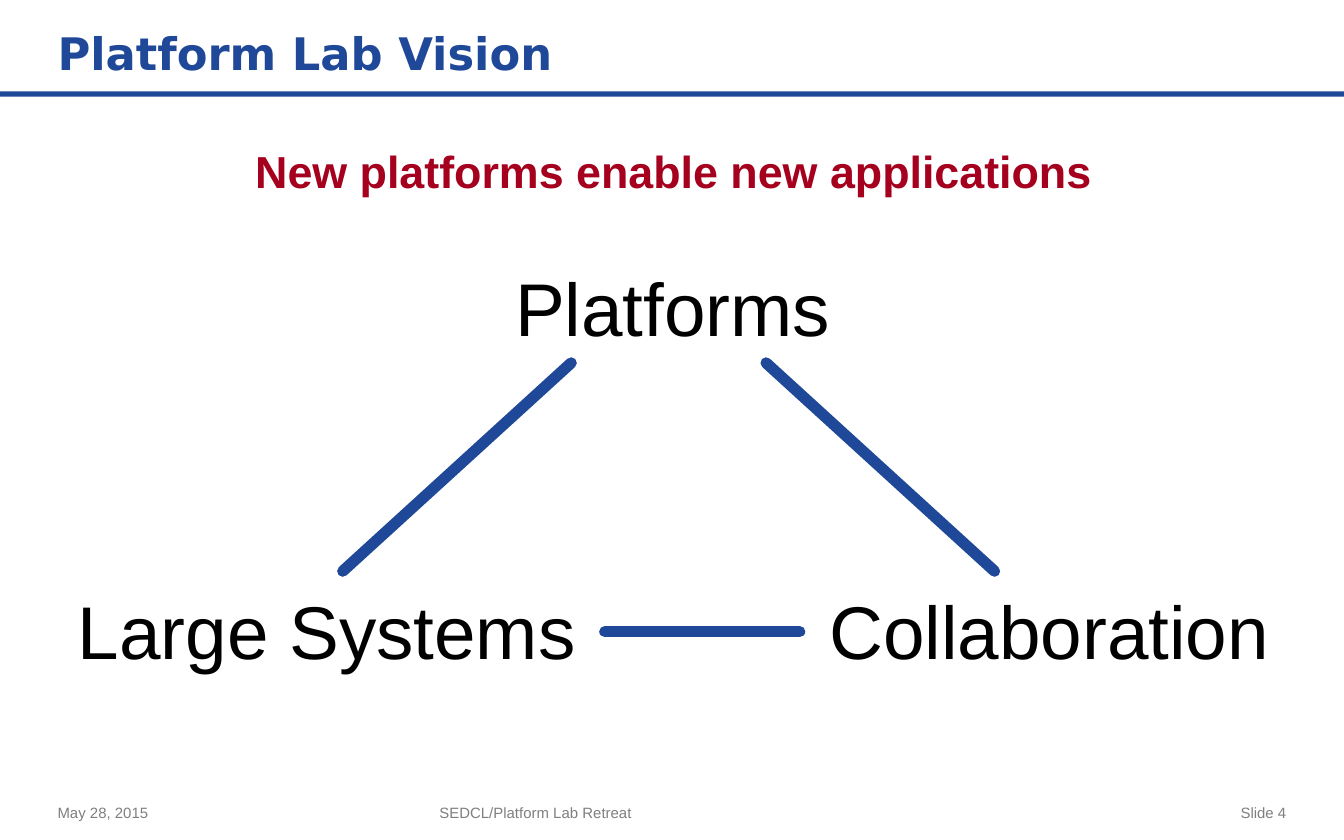
from lxml import etree
from pptx import Presentation
from pptx.dml.color import RGBColor
from pptx.enum.shapes import MSO_CONNECTOR, MSO_SHAPE
from pptx.enum.text import MSO_ANCHOR, MSO_AUTO_SIZE, PP_ALIGN
from pptx.oxml.ns import qn
from pptx.util import Inches, Pt

BLUE = RGBColor(0x1F, 0x48, 0x99)
RED = RGBColor(0xA5, 0x00, 0x1E)
GRAY = RGBColor(0x7F, 0x7F, 0x7F)
BLACK = RGBColor(0x00, 0x00, 0x00)

WIDTH, HEIGHT = 10, 6.25
MARGIN = 0.33


def add_text(slide, box, text, size, color, font="Arial", bold=False,
             align=PP_ALIGN.LEFT, anchor=MSO_ANCHOR.MIDDLE):
    shape = slide.shapes.add_textbox(*map(Inches, box))
    frame = shape.text_frame
    frame.word_wrap = True
    frame.vertical_anchor = anchor
    paragraph = frame.paragraphs[0]
    paragraph.text = text
    paragraph.alignment = align
    paragraph.font.name = font
    paragraph.font.size = Pt(size)
    paragraph.font.bold = bold
    paragraph.font.color.rgb = color
    return frame


def add_label(slide, box, text, size, color, bold=False):
    """Add centred text on one line, in a box that fits it."""
    frame = add_text(slide, box, text, size, color, bold=bold,
                     align=PP_ALIGN.CENTER, anchor=MSO_ANCHOR.TOP)
    frame.word_wrap = False
    frame.auto_size = MSO_AUTO_SIZE.SHAPE_TO_FIT_TEXT
    return frame


def add_edge(slide, start, end):
    """Add a thick line with round ends."""
    connector = slide.shapes.add_connector(
        MSO_CONNECTOR.STRAIGHT, *map(Inches, (*start, *end)))
    connector.line.color.rgb = BLUE
    connector.line.width = Pt(6)
    connector.line._get_or_add_ln().set("cap", "rnd")
    etree.SubElement(connector._element.spPr, qn("a:effectLst"))


def add_header(slide, left, top, width, height):
    rule = slide.shapes.add_shape(
        MSO_SHAPE.RECTANGLE, 0, Inches(0.68), Inches(WIDTH), Inches(0.04))
    rule.shadow.inherit = False
    rule.fill.solid()
    rule.fill.fore_color.rgb = BLUE
    rule.line.fill.background()
    add_text(slide, (left, top, width, height), "Platform Lab Vision", 24,
             BLUE, font="DejaVu Sans", bold=True)


def add_triangle(slide, left, top, width, height):
    label_height = 0.67
    bottom = top + height - label_height
    labels = [
        ("Platforms", 3.82, top, 2.37),
        ("Large Systems", left, bottom, 3.74),
        ("Collaboration", left + width - 3.31, bottom, 3.31),
    ]
    for text, x, y, label_width in labels:
        frame = add_label(slide, (x, y, label_width, label_height),
                          text, 40, BLACK)
        frame.margin_left = frame.margin_right = 0
        frame.margin_top = frame.margin_bottom = 0

    edge_top, edge_bottom, base = top + 0.75, bottom - 0.1, bottom + 0.35
    add_edge(slide, (4.25, edge_top), (2.55, edge_bottom))
    add_edge(slide, (5.7, edge_top), (7.4, edge_bottom))
    add_edge(slide, (4.5, base), (5.95, base))


def add_footer(slide, left, top, width, height):
    side = 2.5
    parts = [
        ("May 28, 2015", left, side, PP_ALIGN.LEFT),
        ("SEDCL/Platform Lab Retreat", 3.17, 3.75, PP_ALIGN.LEFT),
        ("Slide 4", left + width - side, side, PP_ALIGN.RIGHT),
    ]
    for text, x, part_width, align in parts:
        add_text(slide, (x, top, part_width, height), text, 8, GRAY,
                 align=align)


def main():
    presentation = Presentation()
    presentation.slide_width = Inches(WIDTH)
    presentation.slide_height = Inches(HEIGHT)
    slide = presentation.slides.add_slide(presentation.slide_layouts[6])

    content_width = WIDTH - 2 * MARGIN
    add_header(slide, MARGIN, 0.11, content_width, 0.56)
    add_label(slide, (1.77, 1.02, 6.48, 0.5),
              "New platforms enable new applications", 24, RED, bold=True)
    add_triangle(slide, 0.56, 1.95, 8.9, 3.07)
    add_footer(slide, MARGIN, 5.91, content_width, 0.27)
    presentation.save("out.pptx")


if __name__ == "__main__":
    main()
